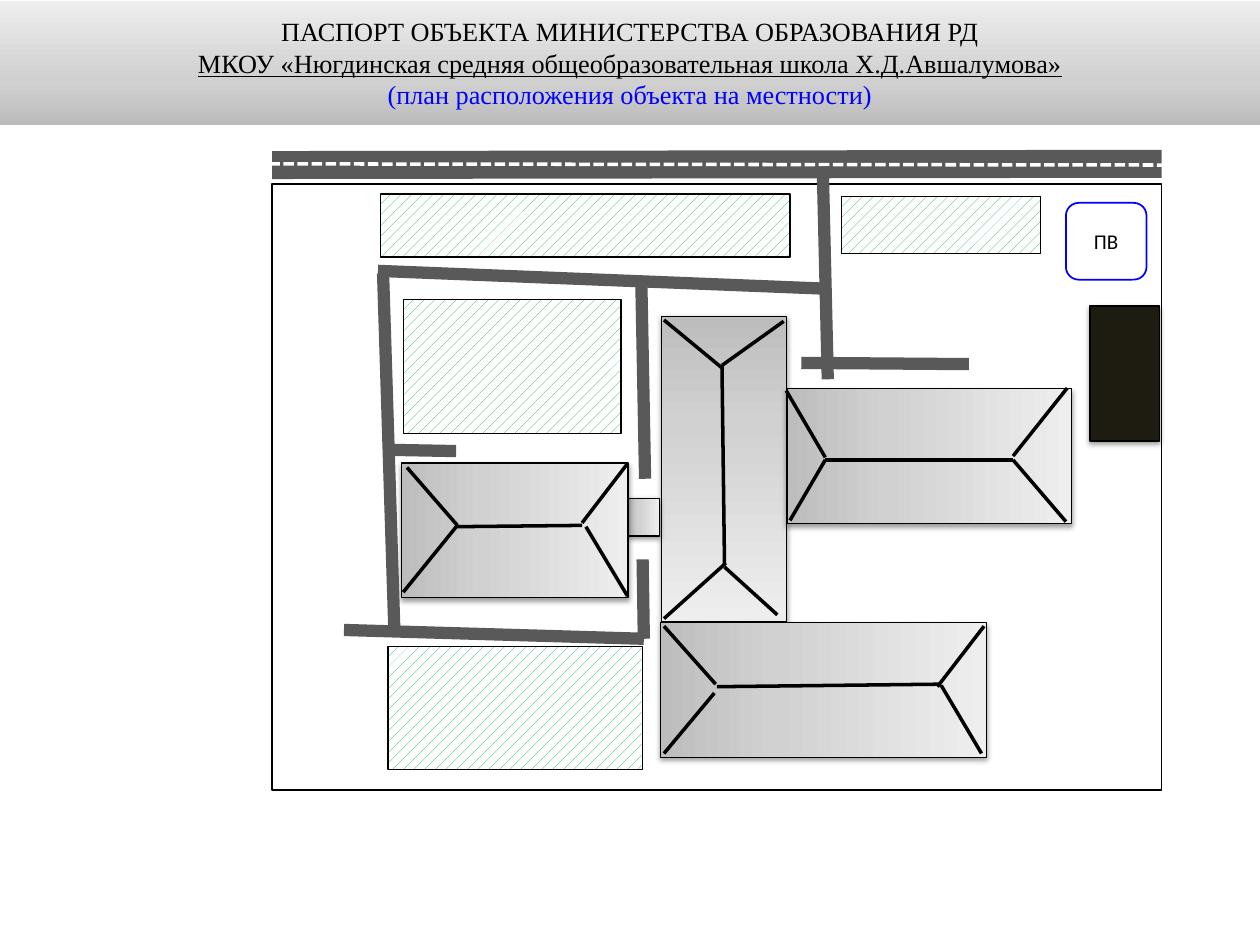
from copy import deepcopy

from lxml import etree
from pptx import Presentation
from pptx.dml.color import RGBColor
from pptx.enum import dml, shapes, text
from pptx.oxml.ns import qn
from pptx.util import Inches, Pt

# The slide is a grid of 1000 columns by 750 rows
COLUMNS, ROWS = 1000, 750
WIDTH, HEIGHT = Inches(10), Inches(7.5)
BLACK, WHITE, BLUE, GREEN, ASPHALT, DARK = (
    "000000", "FFFFFF", "0000FF", "00B050", "595959", "1E1C11")
ROOF_GREYS = [(0, "BDBDBD"), (0.35, "D1D1D1"), (1, "EEEEEE")]
HEADER_GREYS = [(0, "BCBCBC"), (0.35, "D0D0D0"), (1, "EDEDED")]

# Content: areas are left, top, width, height as seen on the plan
TITLE = [
    ("ПАСПОРТ ОБЪЕКТА МИНИСТЕРСТВА ОБРАЗОВАНИЯ РД", {}),
    ("МКОУ «Нюгдинская средняя общеобразовательная школа Х.Д.Авшалумова»",
     {"underline": True}),
    ("(план расположения объекта на местности)", {"color": BLUE}),
]
HEADER = (0, 1, 1000, 98)
SITE = (216, 146, 706, 481)
WATER_POINT = (846, 161, 64, 61)
DARK_BLOCK = (865, 243, 55, 107)

# Each building: area, rotation
BUILDINGS = [
    ((525, 251, 99, 242), 180),
    ((524, 494, 259, 107), 90),
    ((624.5, 308.5, 226, 107), 90),
    ((498.5, 395.5, 25, 30), 90),
    ((318.5, 367.5, 180, 107), 90),
]
# Roof edges: start and end points
ROOF_LINES = [
    # south building
    (744, 545, 781, 497), (779, 598, 747, 544), (527, 598, 567, 550),
    (568, 543, 527, 497), (747, 543, 569, 545),
    # central building
    (573, 290, 622, 255), (573, 292, 527, 254), (527, 491, 576, 447),
    (617, 488, 575, 450), (575, 448, 573, 290),
    # east building
    (804, 362, 847, 308), (846, 414, 804, 365), (627, 413, 655, 365),
    (655, 363, 624, 310), (655, 365, 804, 365),
    # west building
    (363, 417, 323, 371), (498, 473, 465, 418), (462, 415, 498, 368),
    (320, 470, 363, 417), (363, 418, 462, 417),
]
LAWNS = [(308, 513, 202, 98), (320, 238, 173, 106),
         (302, 154, 325, 50), (668, 156, 158, 45)]
ROAD = (216, 131, 922, 130)
ROAD_MARKING = (169, 130, 936, 131)
PATHS = [
    (652, 229, 300, 215), (653, 132, 657, 301), (509, 223, 512, 380),
    (362, 358, 309, 357), (769, 289, 636, 288), (304, 217, 313, 502),
    (511, 507, 273, 500), (510, 444, 511, 507),
]


def x_at(column):
    return round(WIDTH * column / COLUMNS)


def y_at(row):
    return round(HEIGHT * row / ROWS)


def rgb(value):
    return RGBColor.from_string(value)


def set_line(shape, color, width=0):
    shape.line.color.rgb = rgb(color)
    shape.line.width = Pt(width)


def set_gradient(shape, greys):
    """Three stops running upwards."""
    shape.fill.gradient()
    shape.fill.gradient_angle = 90
    stop_list = shape._element.spPr.find(".//" + qn("a:gsLst"))
    stop_list.insert(1, deepcopy(stop_list[0]))
    for stop, (position, color) in zip(shape.fill.gradient_stops, greys):
        stop.position = position
        stop.color.rgb = rgb(color)


def add_shadow(shape):
    effects = shape._element.spPr.find(qn("a:effectLst"))
    shadow = etree.SubElement(
        effects, qn("a:outerShdw"), blurRad=str(Pt(3.1)), dist=str(Pt(1.6)),
        dir="5400000", rotWithShape="0")
    color = etree.SubElement(shadow, qn("a:srgbClr"), val=BLACK)
    etree.SubElement(color, qn("a:alpha"), val="38000")


def add_area(page, area, rotation=0, kind=shapes.MSO_SHAPE.RECTANGLE,
             fill=None, line=BLACK, width=0):
    left, top, wide, high = area
    if rotation == 90:  # the frame is stored unrotated around the same centre
        left, top = left + (wide - high) / 2, top + (high - wide) / 2
        wide, high = high, wide
    shape = page.shapes.add_shape(
        kind, x_at(left), y_at(top), x_at(wide), y_at(high))
    shape.rotation = rotation
    shape.shadow.inherit = False
    if fill:
        shape.fill.solid()
        shape.fill.fore_color.rgb = rgb(fill)
    else:
        shape.fill.background()
    if line:
        set_line(shape, line, width)
    else:
        shape.line.fill.background()
    return shape


def add_line(page, points, color=BLACK, width=0):
    x1, y1, x2, y2 = points
    line = page.shapes.add_connector(
        shapes.MSO_CONNECTOR.STRAIGHT, x_at(x1), y_at(y1), x_at(x2), y_at(y2))
    set_line(line, color, width)
    etree.SubElement(line._element.spPr, qn("a:effectLst"))
    return line


def add_path(page, points):
    x1, y1, x2, y2 = points
    builder = page.shapes.build_freeform(x_at(x1), y_at(y1))
    builder.add_line_segments([(x_at(x2), y_at(y2))], close=False)
    path = builder.convert_to_shape()
    path.shadow.inherit = False
    path.fill.background()
    set_line(path, ASPHALT, 7)


def write(para, words, size=15, font="Times New Roman", color=BLACK,
          underline=False):
    para.alignment = text.PP_ALIGN.CENTER
    span = para.add_run()
    span.text = words
    span.font.size, span.font.name = Pt(size), font
    span.font.color.rgb = rgb(color)
    span.font.underline = underline


def main():
    deck = Presentation()
    deck.slide_width, deck.slide_height = WIDTH, HEIGHT
    page = deck.slides.add_slide(deck.slide_layouts[6])

    # Site border and buildings
    add_area(page, SITE)
    for area, rotation in BUILDINGS:
        building = add_area(page, area, rotation)
        set_gradient(building, ROOF_GREYS)
        add_shadow(building)
    add_shadow(add_area(page, DARK_BLOCK, 90, fill=DARK))

    # Header
    header = add_area(page, HEADER, line=None)
    set_gradient(header, HEADER_GREYS)
    frame = header.text_frame
    frame.word_wrap = True
    frame.vertical_anchor = text.MSO_ANCHOR.MIDDLE
    for index, (words, style) in enumerate(TITLE):
        para = frame.add_paragraph() if index else frame.paragraphs[0]
        write(para, words, **style)

    # Roof edges and lawns
    for points in ROOF_LINES:
        add_line(page, points)
    for area in LAWNS:
        lawn = add_area(page, area)
        lawn.fill.patterned()
        lawn.fill.pattern = dml.MSO_PATTERN.DASHED_UPWARD_DIAGONAL
        lawn.fill.fore_color.rgb = rgb(GREEN)
        lawn.fill.back_color.rgb = rgb(WHITE)

    # Water point
    point = add_area(page, WATER_POINT, kind=shapes.MSO_SHAPE.ROUNDED_RECTANGLE,
                     fill=WHITE, line=BLUE, width=1)
    point.text_frame.vertical_anchor = text.MSO_ANCHOR.MIDDLE
    write(point.text_frame.paragraphs[0], "ПВ", size=12, font="Calibri")

    # Road and paths
    add_line(page, ROAD, ASPHALT, 16)
    marking = add_line(page, ROAD_MARKING, WHITE)
    marking.line.dash_style = dml.MSO_LINE.SQUARE_DOT
    for points in PATHS:
        add_path(page, points)

    deck.save("out.pptx")


if __name__ == "__main__":
    main()
